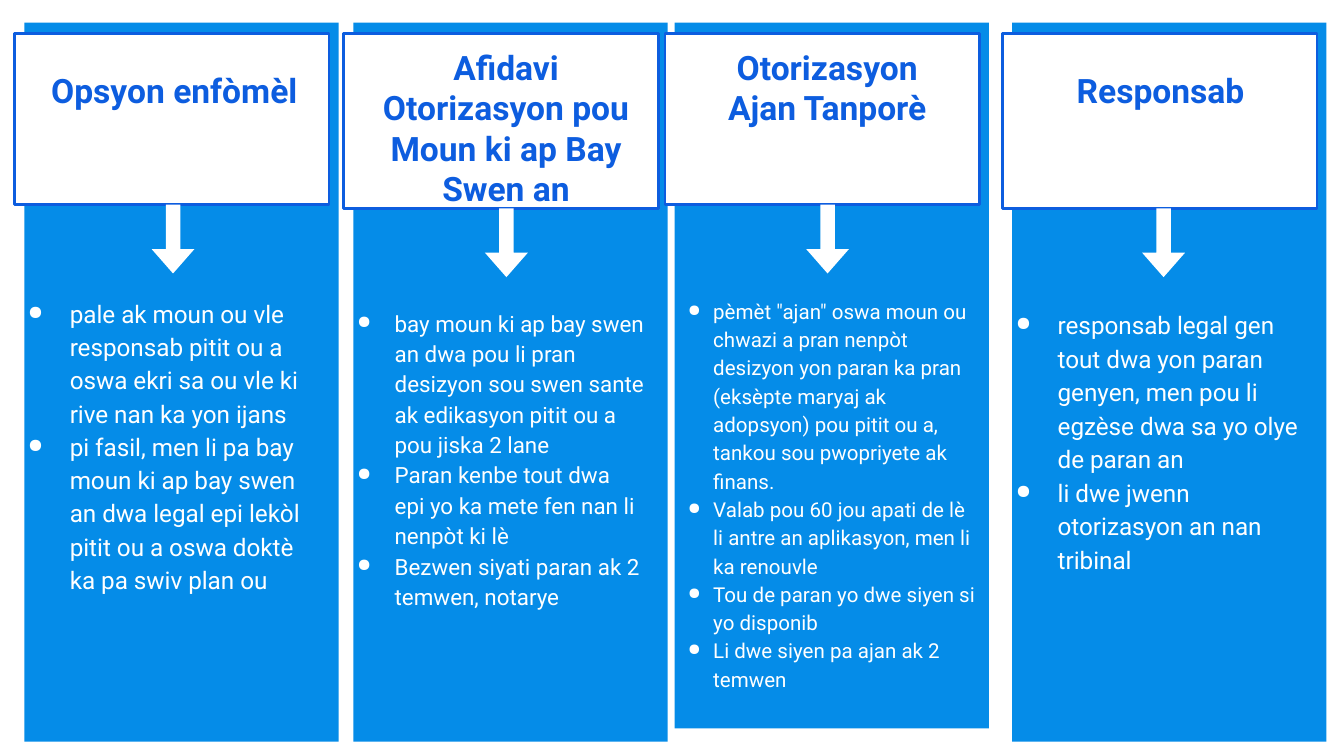
from dataclasses import dataclass
from typing import Any

from lxml import etree
from pptx import Presentation, util as u
from pptx.dml import color
from pptx.enum import shapes, text
from pptx.oxml import ns

COLORS = {"panel": "058CE8", "accent": "0D5DDF", "white": "FFFFFF"}
FONT = "Roboto"
PANEL_TOP, PANEL_WIDTH = 0.43, 5.94
HEADER_TOP, HEADER_SHIFT = 0.64, 0.18
TITLE_WIDTH, TITLE_HEIGHT = 5.31, 2.26
ARROW_LENGTH, ARROW_WIDTH = 1.3, 0.81


@dataclass
class Column:
    """One option; lengths in cm, shifts measured from the panel's left edge."""
    title: str
    bullets: list[str]
    left: float
    panel_height: float
    header_height: float
    title_shift: float
    title_top: float
    arrow_shift: float
    body_shift: float
    body_top: float
    body_height: float
    indent: float
    size: int
    spacing: float


COLUMNS = [
    Column("Opsyon enfòmèl", [
        "pale ak moun ou vle responsab pitit ou a oswa ekri sa ou vle ki rive nan ka yon ijans",
        "pi fasil, men li pa bay moun ki ap bay swen an dwa legal epi lekòl pitit ou a "
        "oswa doktè ka pa swiv plan ou",
    ], 0.46, 13.59, 3.23, 0.18, 1.07, 2.16, -0.18, 5.33, 8.36, 0.79, 13, 1.14),
    Column("Afidavi Otorizasyon pou Moun ki ap Bay Swen an", [
        "bay moun ki ap bay swen an dwa pou li pran desizyon sou swen sante "
        "ak edikasyon pitit ou a pou jiska 2 lane",
        "Paran kenbe tout dwa epi yo ka mete fen nan li nenpòt ki lè",
        "Bezwen siyati paran ak 2 temwen, notarye",
    ], 6.68, 13.59, 3.3, 0.23, 0.64, 2.24, -0.18, 5.54, 8.18, 0.71, 12, 1.13),
    Column("Otorizasyon Ajan Tanporè", [
        'pèmèt "ajan" oswa moun ou chwazi a pran nenpòt desizyon yon paran ka pran '
        "(eksèpte maryaj ak adopsyon) pou pitit ou a, tankou sou pwopriyete ak finans.",
        "Valab pou 60 jou apati de lè li antre an aplikasyon, men li ka renouvle",
        "Tou de paran yo dwe siyen si yo disponib",
        "Li dwe siyen pa ajan ak 2 temwen",
    ], 12.75, 13.34, 3.23, 0.23, 0.64, 2.24, 0, 5.33, 8.05, 0.48, 11, 1.15),
    Column("Responsab", [
        "responsab legal gen tout dwa yon paran genyen, men pou li egzèse dwa sa yo "
        "olye de paran an",
        "li dwe jwenn otorizasyon an nan tribinal",
    ], 19.13, 13.59, 3.3, 0.15, 1.07, 2.21, -0.18, 5.54, 8.18, 0.79, 13, 1.15),
]


def rgb(name: str) -> color.RGBColor:
    return color.RGBColor.from_string(COLORS[name])


def add_block(group: Any, kind: Any, left: float, top: float, width: float,
              height: float, fill: str, line: str | None = None) -> Any:
    shape = group.shapes.add_shape(kind, u.Cm(left), u.Cm(top), u.Cm(width), u.Cm(height))
    shape.shadow.inherit = False
    shape.fill.solid()
    shape.fill.fore_color.rgb = rgb(fill)
    if line:
        shape.line.color.rgb = rgb(line)
        shape.line.width = u.Pt(1.5)
    else:
        shape.line.fill.background()
    return shape


def add_text_frame(group: Any, left: float, top: float, width: float, height: float) -> Any:
    box = group.shapes.add_textbox(u.Cm(left), u.Cm(top), u.Cm(width), u.Cm(height))
    frame = box.text_frame
    frame.word_wrap = True
    frame.margin_left = frame.margin_right = u.Cm(0.25)
    frame.margin_top = frame.margin_bottom = u.Cm(0.25)
    return frame


def add_run(paragraph: Any, words: str, size: int, fill: str, bold: bool = False) -> None:
    run = paragraph.add_run()
    run.text = words
    run.font.name = FONT
    run.font.size = u.Pt(size)
    run.font.bold = bold
    run.font.color.rgb = rgb(fill)


def set_bullet(paragraph: Any, indent: float) -> None:
    properties = paragraph._p.get_or_add_pPr()
    properties.set("marL", str(u.Cm(indent)))
    properties.set("indent", str(-u.Cm(indent)))
    bullet_color = etree.SubElement(properties, ns.qn("a:buClr"))
    etree.SubElement(bullet_color, ns.qn("a:srgbClr"), val=COLORS["white"])
    etree.SubElement(properties, ns.qn("a:buSzPct"), val="80000")
    etree.SubElement(properties, ns.qn("a:buChar"), char="●")


def add_column(slide: Any, column: Column) -> None:
    group = slide.shapes.add_group_shape()
    rectangle = shapes.MSO_SHAPE.RECTANGLE

    # Panel and header card
    add_block(group, rectangle, column.left, PANEL_TOP, PANEL_WIDTH,
              column.panel_height, "panel")
    add_block(group, rectangle, column.left - HEADER_SHIFT, HEADER_TOP, PANEL_WIDTH,
              column.header_height, "white", "accent")

    # Title
    frame = add_text_frame(group, column.left + column.title_shift, column.title_top,
                           TITLE_WIDTH, TITLE_HEIGHT)
    paragraph = frame.paragraphs[0]
    paragraph.alignment = text.PP_ALIGN.CENTER
    add_run(paragraph, column.title, 18, "accent", bold=True)

    # Arrow hanging from the header, turned to point down
    arrow_top = HEADER_TOP + column.header_height + (ARROW_LENGTH - ARROW_WIDTH) / 2
    arrow = add_block(group, shapes.MSO_SHAPE.RIGHT_ARROW, column.left + column.arrow_shift,
                      arrow_top, ARROW_LENGTH, ARROW_WIDTH, "white")
    arrow.rotation = 90
    arrow.adjustments[0] = 0.34
    arrow.adjustments[1] = 0.57

    # Bullet list
    frame = add_text_frame(group, column.left + column.body_shift, column.body_top,
                           PANEL_WIDTH, column.body_height)
    for index, bullet in enumerate(column.bullets):
        paragraph = frame.add_paragraph() if index else frame.paragraphs[0]
        set_bullet(paragraph, column.indent)
        paragraph.line_spacing = column.spacing
        add_run(paragraph, bullet, column.size, "white")


def main() -> None:
    presentation = Presentation()
    presentation.slide_width = u.Cm(25.4)
    presentation.slide_height = u.Cm(14.29)
    slide = presentation.slides.add_slide(presentation.slide_layouts[6])
    for column in COLUMNS:
        add_column(slide, column)
    presentation.save("out.pptx")


if __name__ == "__main__":
    main()
